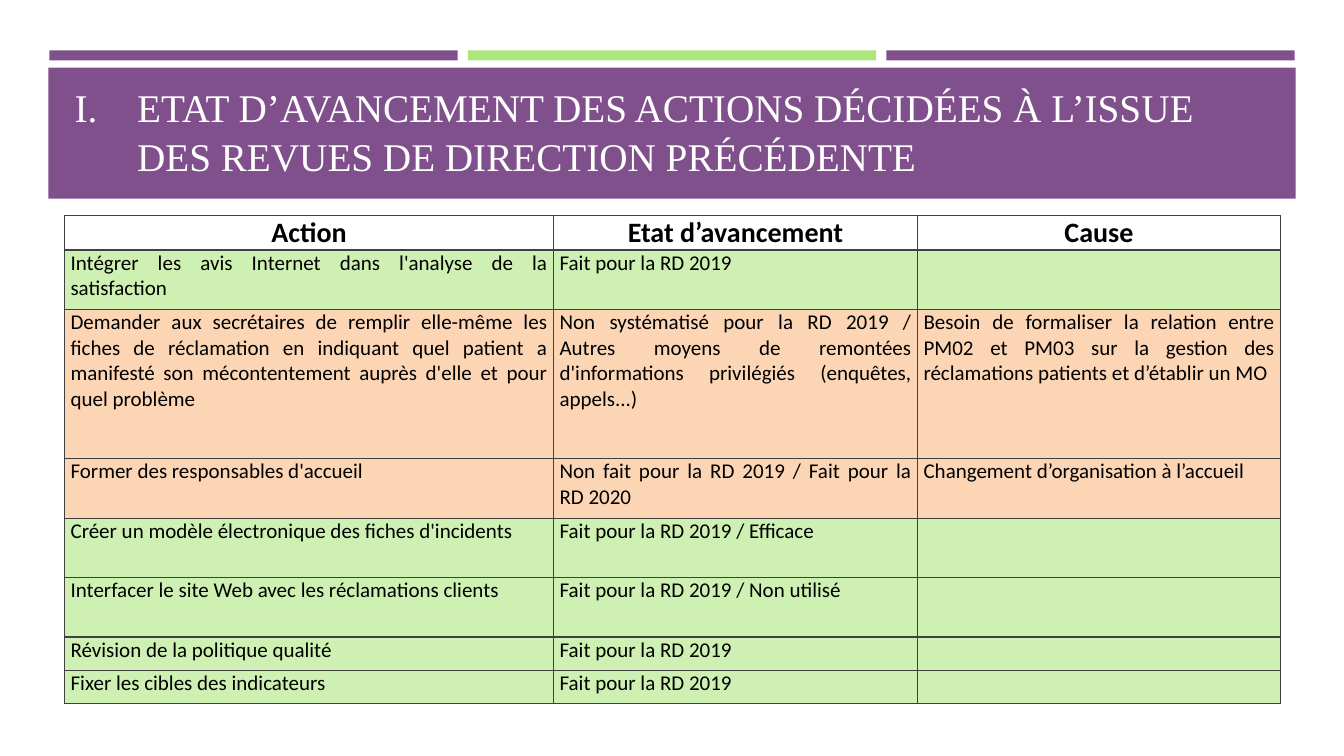
import dataclasses

import lxml.etree
import pptx
import pptx.dml.color
import pptx.enum.shapes
import pptx.enum.text
import pptx.oxml
import pptx.oxml.ns
import pptx.util

Inches = pptx.util.Inches
Pt = pptx.util.Pt
RGB = pptx.dml.color.RGBColor
Align = pptx.enum.text.PP_ALIGN
Anchor = pptx.enum.text.MSO_ANCHOR

PURPLE = RGB(0x7F, 0x50, 0x8B)
LIME = RGB(0xAD, 0xE6, 0x7F)
GREEN = RGB(0xCE, 0xF0, 0xB2)
PEACH = RGB(0xFC, 0xD5, 0xB5)
GREY = RGB(0x40, 0x40, 0x40)
WHITE = RGB(0xFF, 0xFF, 0xFF)
BLACK = RGB(0, 0, 0)


@dataclasses.dataclass
class Bar:
    left: float
    top: float
    width: float
    height: float
    color: RGB


@dataclasses.dataclass
class Row:
    height: float
    fill: RGB | None
    action: str
    state: str
    cause: str = ""


BARS = [Bar(0.49 + 4.15 * i, 0.5, 4.05, 0.1, color)
        for i, color in enumerate((PURPLE, LIME, PURPLE))]
BARS.append(Bar(0.48, 0.67, 12.37, 1.3, PURPLE))

TITLE = ("ETAT D’AVANCEMENT DES ACTIONS DÉCIDÉES À L’ISSUE "
         "DES REVUES DE DIRECTION PRÉCÉDENTE")
WIDTHS = (4.85, 3.61, 3.6)
ROWS = [
    Row(0.31, None, "Action", "Etat d’avancement", "Cause"),
    Row(0.59, GREEN,
        "Intégrer les avis Internet dans l'analyse de la satisfaction",
        "Fait pour la RD 2019"),
    Row(1.48, PEACH,
        "Demander aux secrétaires de remplir elle-même les fiches de "
        "réclamation en indiquant quel patient a manifesté son "
        "mécontentement auprès d'elle et pour quel problème",
        "Non systématisé pour la RD 2019 / Autres moyens de remontées "
        "d'informations privilégiés (enquêtes, appels...)",
        "Besoin de formaliser la relation entre PM02 et PM03 sur la "
        "gestion des réclamations patients et d’établir un MO"),
    Row(0.59, PEACH, "Former des responsables d'accueil",
        "Non fait pour la RD 2019 / Fait pour la RD 2020",
        "Changement d’organisation à l’accueil"),
    Row(0.59, GREEN, "Créer un modèle électronique des fiches d'incidents",
        "Fait pour la RD 2019 / Efficace"),
    Row(0.59, GREEN, "Interfacer le site Web avec les réclamations clients",
        "Fait pour la RD 2019 / Non utilisé"),
    Row(0.33, GREEN, "Révision de la politique qualité",
        "Fait pour la RD 2019"),
    Row(0.33, GREEN, "Fixer les cibles des indicateurs",
        "Fait pour la RD 2019"),
]

HEAD = {"name": "Calibri", "size": Pt(20), "bold": True}
BODY = {"name": "Calibri", "size": Pt(15), "bold": False}
TOP = {"name": "Times New Roman", "size": Pt(28), "bold": False}
PADS = {"margin_left": Inches(0.06), "margin_right": Inches(0.06),
        "margin_top": 0, "margin_bottom": 0}


def apply(target: object, values: dict) -> None:
    for key, value in values.items():
        setattr(target, key, value)


def style(para, align: Align, font: dict, color: RGB) -> None:
    para.alignment = align
    apply(para.font, font)
    para.font.color.rgb = color


def add_bar(slide, bar: Bar) -> None:
    shape = slide.shapes.add_shape(
        pptx.enum.shapes.MSO_SHAPE.RECTANGLE, Inches(bar.left),
        Inches(bar.top), Inches(bar.width), Inches(bar.height))
    shape.shadow.inherit = False
    shape.fill.solid()
    shape.fill.fore_color.rgb = bar.color
    shape.line.fill.background()


def set_title(slide) -> None:
    title = slide.shapes.title
    title._element.getparent().append(title._element)
    apply(title, {"left": Inches(0.64), "top": Inches(0.65),
                  "width": Inches(12.06), "height": Inches(1.65)})
    frame = title.text_frame
    frame.text = TITLE
    apply(frame, {"vertical_anchor": Anchor.BOTTOM, "word_wrap": True,
                  "auto_size": pptx.enum.text.MSO_AUTO_SIZE.NONE,
                  "margin_bottom": Inches(0.52)})
    para = frame.paragraphs[0]
    props = para._p.get_or_add_pPr()
    props.set("marL", str(Inches(0.62)))
    props.set("indent", str(Inches(-0.62)))
    para.line_spacing = 1.04
    for tag, key, value in (("a:buFont", "typeface", "Times New Roman"),
                            ("a:buAutoNum", "type", "romanUcPeriod")):
        node = lxml.etree.SubElement(props, pptx.oxml.ns.qn(tag))
        node.set(key, value)
    style(para, Align.LEFT, TOP, WHITE)


def add_edges(cell) -> None:
    """Draw the four borders; they must come before the cell's fill."""
    props = cell._tc.get_or_add_tcPr()
    for i, side in enumerate(("lnL", "lnR", "lnT", "lnB")):
        props.insert(i, pptx.oxml.parse_xml(
            f'<a:{side} {pptx.oxml.ns.nsdecls("a")} w="{Pt(1)}">'
            f'<a:solidFill><a:srgbClr val="{GREY}"/></a:solidFill>'
            f'</a:{side}>'))


def fill_cell(cell, text: str, fill: RGB | None) -> None:
    head = fill is None
    cell.text = text
    apply(cell, PADS)
    cell.vertical_anchor = Anchor.MIDDLE if head else Anchor.TOP
    style(cell.text_frame.paragraphs[0],
          Align.CENTER if head else Align.JUSTIFY,
          HEAD if head else BODY, BLACK)
    if head:
        cell.fill.background()
    else:
        cell.fill.solid()
        cell.fill.fore_color.rgb = fill
    add_edges(cell)


def add_grid(slide) -> None:
    table = slide.shapes.add_table(
        len(ROWS), len(WIDTHS), Inches(0.64), Inches(2.14),
        Inches(sum(WIDTHS)), Inches(sum(r.height for r in ROWS))).table
    table.horz_banding = False
    for col, width in zip(table.columns, WIDTHS):
        col.width = Inches(width)
    for line, row in zip(table.rows, ROWS):
        line.height = Inches(row.height)
        for cell, text in zip(line.cells, (row.action, row.state, row.cause)):
            fill_cell(cell, text, row.fill)


def main() -> None:
    deck = pptx.Presentation()
    deck.slide_width, deck.slide_height = Inches(13.33), Inches(7.5)
    slide = deck.slides.add_slide(deck.slide_layouts[5])
    for bar in BARS:
        add_bar(slide, bar)
    set_title(slide)
    add_grid(slide)
    deck.save("out.pptx")


if __name__ == "__main__":
    main()
